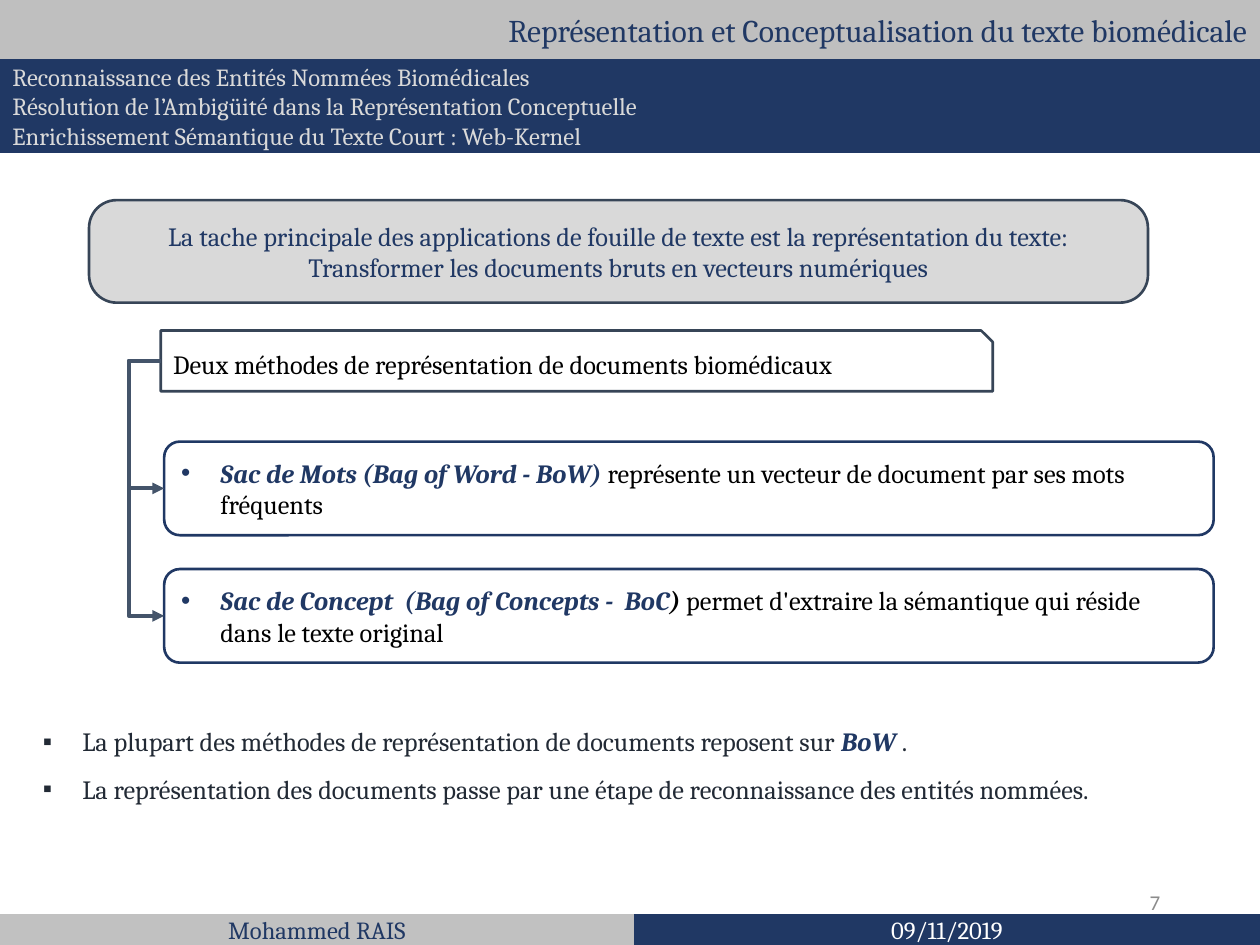
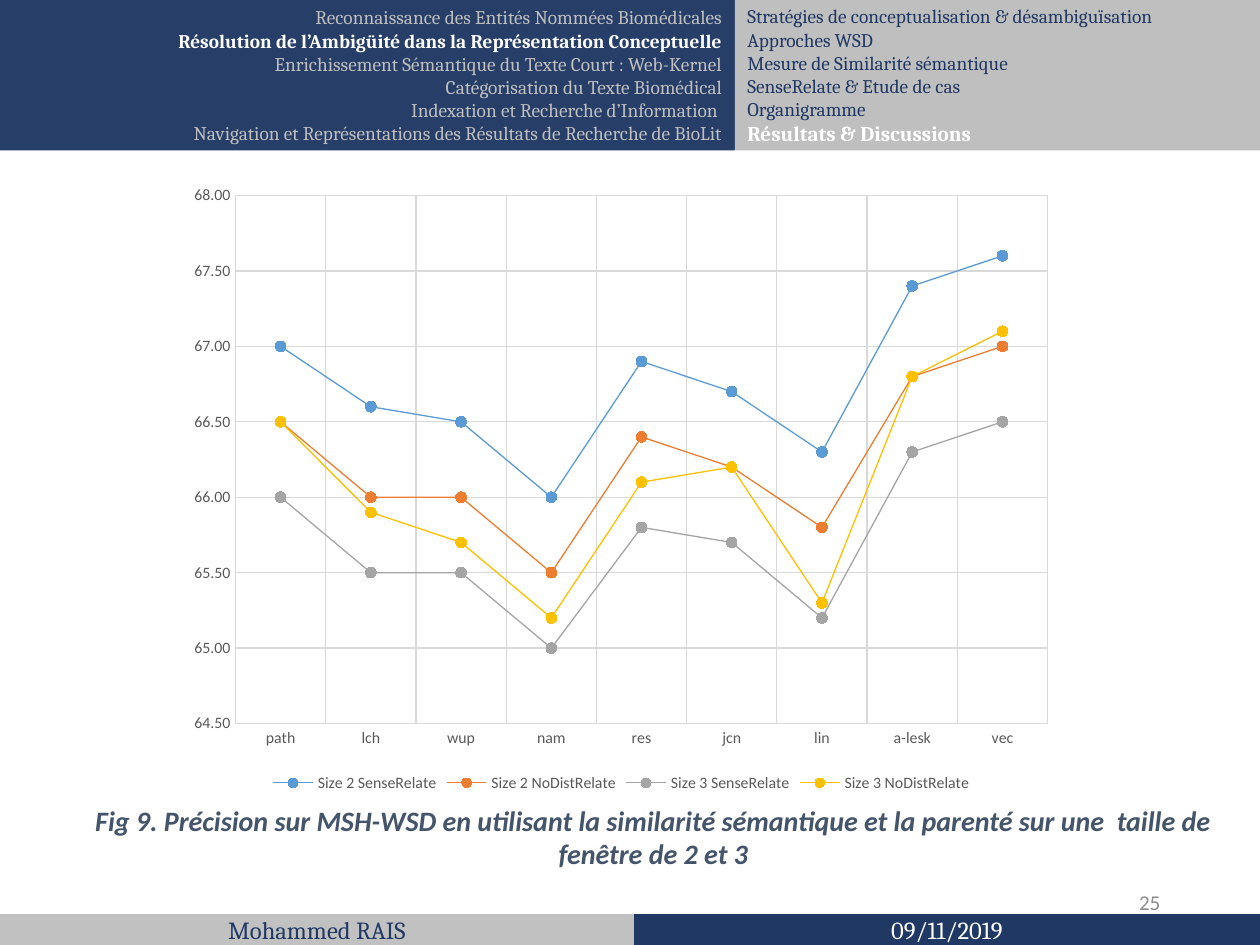
from lxml import etree
from pptx import Presentation
from pptx.chart.data import CategoryChartData
from pptx.dml.color import RGBColor
from pptx.enum.chart import XL_CHART_TYPE as CT, XL_LEGEND_POSITION as LP
from pptx.enum.chart import XL_MARKER_STYLE as MS, XL_TICK_MARK as TM
from pptx.enum.shapes import MSO_CONNECTOR as CONN, MSO_SHAPE as SHAPE
from pptx.enum.text import MSO_ANCHOR as ANCHOR, MSO_AUTO_SIZE as FIT, PP_ALIGN as AL
from pptx.oxml.ns import qn
from pptx.util import Cm, Pt

# Shared look
W, H = 25.32, 18.98
NAVY, SILVER, PALE, WHITE, BLACK = "203864", "BFBFBF", "D9D9D9", "FFFFFF", "000000"
EDGE, SLATE, INK, GREY, LABEL = "374557", "44546A", "222A35", "8C8C8C", "595959"
SERIF, SANS = "Cambria", "Calibri"
HALF, FOOT_H, BULLET_INDENT = 12.74, 0.62, 0.79
STRONG = dict(color=NAVY, bold=True, italic=True)


def rgb(hex_text):
    return RGBColor.from_string(hex_text)


def style_font(font, size, color, name=SERIF, bold=False, italic=False):
    font.size, font.name = Pt(size), name
    font.bold, font.italic = bold, italic
    font.color.rgb = rgb(color)


def paint(sp, fill, line=None, alpha=None):
    sp.fill.solid()
    sp.fill.fore_color.rgb = rgb(fill)
    if alpha:
        clr = sp.fill._xPr.find(".//" + qn("a:srgbClr"))
        etree.SubElement(clr, qn("a:alpha")).set("val", str(alpha * 1000))
    if line:
        sp.line.color.rgb = rgb(line)
        sp.line.width = Pt(1.5)
    else:
        sp.line.fill.background()


def add_bullet(p, char):
    pPr = p._p.get_or_add_pPr()
    pPr.set("marL", str(Cm(BULLET_INDENT)))
    pPr.set("indent", str(-Cm(BULLET_INDENT)))
    etree.SubElement(pPr, qn("a:buFont")).set("typeface", "Arial")
    etree.SubElement(pPr, qn("a:buChar")).set("char", char)


def write(sp, paras, size, color, align=AL.LEFT, anchor=ANCHOR.MIDDLE,
          bullet=None, spacing=None, **base):
    """Each paragraph is a string or a list of (text, style changes)."""
    tf = sp.text_frame
    tf.word_wrap, tf.auto_size, tf.vertical_anchor = True, FIT.NONE, anchor
    for i, runs in enumerate(paras):
        p = tf.add_paragraph() if i else tf.paragraphs[0]
        p.alignment, p.space_before = align, Pt(0)
        if spacing:
            p.line_spacing = spacing
        if bullet:
            add_bullet(p, bullet)
        for text, change in [(runs, {})] if isinstance(runs, str) else runs:
            r = p.add_run()
            r.text = text
            style_font(r.font, **{"size": size, "color": color, **base, **change})


def place(sp, x, y, w, h):
    sp.left, sp.top, sp.width, sp.height = Cm(x), Cm(y), Cm(w), Cm(h)
    return sp


def add_box(s, box, fill, shape=SHAPE.RECTANGLE, line=None, alpha=None, adj=None):
    sp = s.shapes.add_shape(shape, *map(Cm, box))
    sp.shadow.inherit = False
    paint(sp, fill, line, alpha)
    if adj:
        sp.adjustments[0] = adj
    return sp


def add_footer(s, number):
    sp = s.shapes.add_textbox(Cm(17.88), Cm(17.6), Cm(5.69), Cm(1.02))
    write(sp, [number], 12, GREY, AL.RIGHT, name=SANS)
    y = H - FOOT_H
    date = add_box(s, (HALF, y, W - HALF, FOOT_H), NAVY)
    write(date, ["09/11/2019"], 14, WHITE, AL.CENTER)
    author = add_box(s, (0, y, HALF, FOOT_H), SILVER, alpha=97)
    write(author, ["Mohammed RAIS"], 14, NAVY, AL.CENTER)


def add_elbow(s, x1, y1, x2, y2, x_turn):
    c = s.shapes.add_connector(CONN.ELBOW, Cm(x1), Cm(y1), Cm(x2), Cm(y2))
    c.line.color.rgb = rgb(SLATE)
    c.line.width = Pt(2.25)
    etree.SubElement(c.line._get_or_add_ln(), qn("a:tailEnd")).set("type", "triangle")
    spPr = c._element.spPr
    etree.SubElement(spPr, qn("a:effectLst"))
    guide = etree.SubElement(spPr.find(".//" + qn("a:avLst")), qn("a:gd"))
    guide.set("name", "adj1")
    guide.set("fmla", f"val {round((x_turn - x1) / (x2 - x1) * 100000)}")


def style_axis(axis):
    axis.major_tick_mark = axis.minor_tick_mark = TM.NONE
    style_font(axis.tick_labels.font, 9, LABEL, SANS)
    axis.has_major_gridlines = True
    grid = axis.major_gridlines.format.line
    grid.color.rgb, grid.width = rgb(PALE), Pt(0.75)


def add_line_chart(s, box, cats, series):
    data = CategoryChartData(number_format="0.00")
    data.categories = cats
    for name, _, vals in series:
        data.add_series(name, vals)
    ch = s.shapes.add_chart(CT.LINE_MARKERS, *map(Cm, box), data).chart
    style_font(ch.font, 10, BLACK, SANS)
    ch.has_title = False
    ch.has_legend = True
    ch.legend.position, ch.legend.include_in_layout = LP.BOTTOM, False
    style_font(ch.legend.font, 9, LABEL, SANS)
    # Axes
    cat, val = ch.category_axis, ch.value_axis
    style_axis(cat)
    style_axis(val)
    cat.format.line.color.rgb, cat.format.line.width = rgb(PALE), Pt(1)
    val.format.line.fill.background()
    val.minimum_scale, val.maximum_scale, val.major_unit = 64.5, 68, 0.5
    val.tick_labels.number_format = "0.00"
    val.tick_labels.number_format_is_linked = False
    # Series
    plot = ch.plots[0]
    plot.vary_by_categories = False
    for ser, (_, color, _) in zip(plot.series, series):
        ser.smooth = False
        ser.format.line.color.rgb, ser.format.line.width = rgb(color), Pt(0.75)
        ser.marker.style, ser.marker.size = MS.CIRCLE, 6
        ser.marker.format.fill.solid()
        ser.marker.format.fill.fore_color.rgb = rgb(color)
        ser.marker.format.line.color.rgb = rgb(color)


def build_methods(prs):
    s = prs.slides.add_slide(prs.slide_layouts[1])
    # Heading bands
    title_h = 1.19
    title = place(s.shapes.title, 0, 0, W, title_h)
    paint(title, SILVER)
    write(title, ["Représentation et Conceptualisation du texte biomédicale"],
          18, NAVY, AL.RIGHT)
    nav = add_box(s, (0, title_h, W, 1.88), NAVY)
    write(nav, ["Reconnaissance des Entités Nommées Biomédicales",
                "Résolution de l’Ambigüité dans la Représentation Conceptuelle",
                "Enrichissement Sémantique du Texte Court : Web-Kernel"], 14, PALE)
    # Main task
    task = add_box(s, (1.79, 4.02, 21.28, 2.06), PALE, SHAPE.ROUNDED_RECTANGLE, EDGE, adj=0.27)
    task.text_frame.margin_left = task.text_frame.margin_right = Cm(0.5)
    write(task, ["La tache principale des applications de fouille de texte est la "
                 "représentation du texte: Transformer les documents bruts en "
                 "vecteurs numériques"], 15, NAVY, AL.CENTER)
    # Two methods, each reached by an elbow arrow
    root_x, root_y, root_h = 3.23, 6.64, 1.22
    root = add_box(s, (root_x, root_y, 16.72, root_h), WHITE,
                   SHAPE.SNIP_1_RECTANGLE, EDGE, adj=0.19)
    write(root, ["Deux méthodes de représentation de documents biomédicaux"], 15, BLACK)
    methods = [
        [("Sac de Mots (Bag of Word - BoW) ", STRONG),
         ("représente un vecteur de document par ses mots fréquents", {})],
        [("Sac de Concept  (Bag of Concepts -  BoC", STRONG),
         (") ", dict(bold=True, italic=True)),
         ("permet d'extraire la sémantique qui réside dans le texte original", {})]]
    x, h = 3.3, 1.88
    for i, runs in enumerate(methods):
        y = 8.87 + i * 2.56
        method = add_box(s, (x, y, 21.09, h), WHITE, SHAPE.ROUNDED_RECTANGLE, NAVY)
        method.text_frame.margin_right = Cm(0.5)
        write(method, [runs], 15, BLACK, bullet="•")
        add_elbow(s, root_x, root_y + root_h / 2, x, y + h / 2, 2.59)
    # Remarks
    body = place(s.placeholders[1], 0.61, 14.13, 24.68, 2.18)
    write(body, [[("La plupart des méthodes de représentation de documents reposent sur ", {}),
                  ("BoW", STRONG), (" .", {})],
                 "La représentation des documents passe par une étape de "
                 "reconnaissance des entités nommées."],
          15, INK, anchor=ANCHOR.TOP, bullet="▪", spacing=1.5)
    add_footer(s, "7")


def build_results(prs):
    s = prs.slides.add_slide(prs.slide_layouts[5])
    # Navigation bands, current entries in white
    split, nav_h = 14.77, 3.02
    current = dict(color=WHITE, bold=True)
    chapters = add_box(s, (0, 0, split, nav_h), NAVY, alpha=97)
    write(chapters, ["Reconnaissance des Entités Nommées Biomédicales",
                     [("Résolution de l’Ambigüité dans la Représentation Conceptuelle",
                       current)],
                     "Enrichissement Sémantique du Texte Court : Web-Kernel",
                     "Catégorisation du Texte Biomédical",
                     "Indexation et Recherche d’Information ",
                     "Navigation et Représentations des Résultats de Recherche de BioLit"],
          11, SILVER, AL.RIGHT)
    sections = add_box(s, (split, 0, W - split, nav_h), SILVER)
    write(sections, ["Stratégies de conceptualisation & désambiguïsation",
                     "Approches WSD", "Mesure de Similarité sémantique",
                     "SenseRelate & Etude de cas", "Organigramme",
                     [("Résultats & Discussions", dict(current, size=12))]], 11, NAVY)
    # Precision chart and its caption
    add_line_chart(
        s, (3.55, 3.49, 17.86, 12.52),
        ["path", "lch", "wup", "nam", "res", "jcn", "lin", "a-lesk", "vec"],
        [("Size 2 SenseRelate", "5B9BD5",
          (67, 66.6, 66.5, 66, 66.9, 66.7, 66.3, 67.4, 67.6)),
         ("Size 2 NoDistRelate", "ED7D31",
          (66.5, 66, 66, 65.5, 66.4, 66.2, 65.8, 66.8, 67)),
         ("Size 3 SenseRelate", "A5A5A5",
          (66, 65.5, 65.5, 65, 65.8, 65.7, 65.2, 66.3, 66.5)),
         ("Size 3 NoDistRelate", "FFC000",
          (66.5, 65.9, 65.7, 65.2, 66.1, 66.2, 65.3, 66.8, 67.1))])
    caption = place(s.shapes.title, 0.94, 16, W - 0.94, 1.63)
    write(caption, ["Fig 9. Précision sur MSH-WSD en utilisant la similarité sémantique "
                    "et la parenté sur une  taille de fenêtre de 2 et 3"],
          16, SLATE, AL.CENTER, ANCHOR.TOP, name=SANS, bold=True, italic=True)
    add_footer(s, "25")


def main():
    prs = Presentation()
    prs.slide_width, prs.slide_height = Cm(W), Cm(H)
    build_methods(prs)
    build_results(prs)
    prs.save("out.pptx")


if __name__ == "__main__":
    main()
